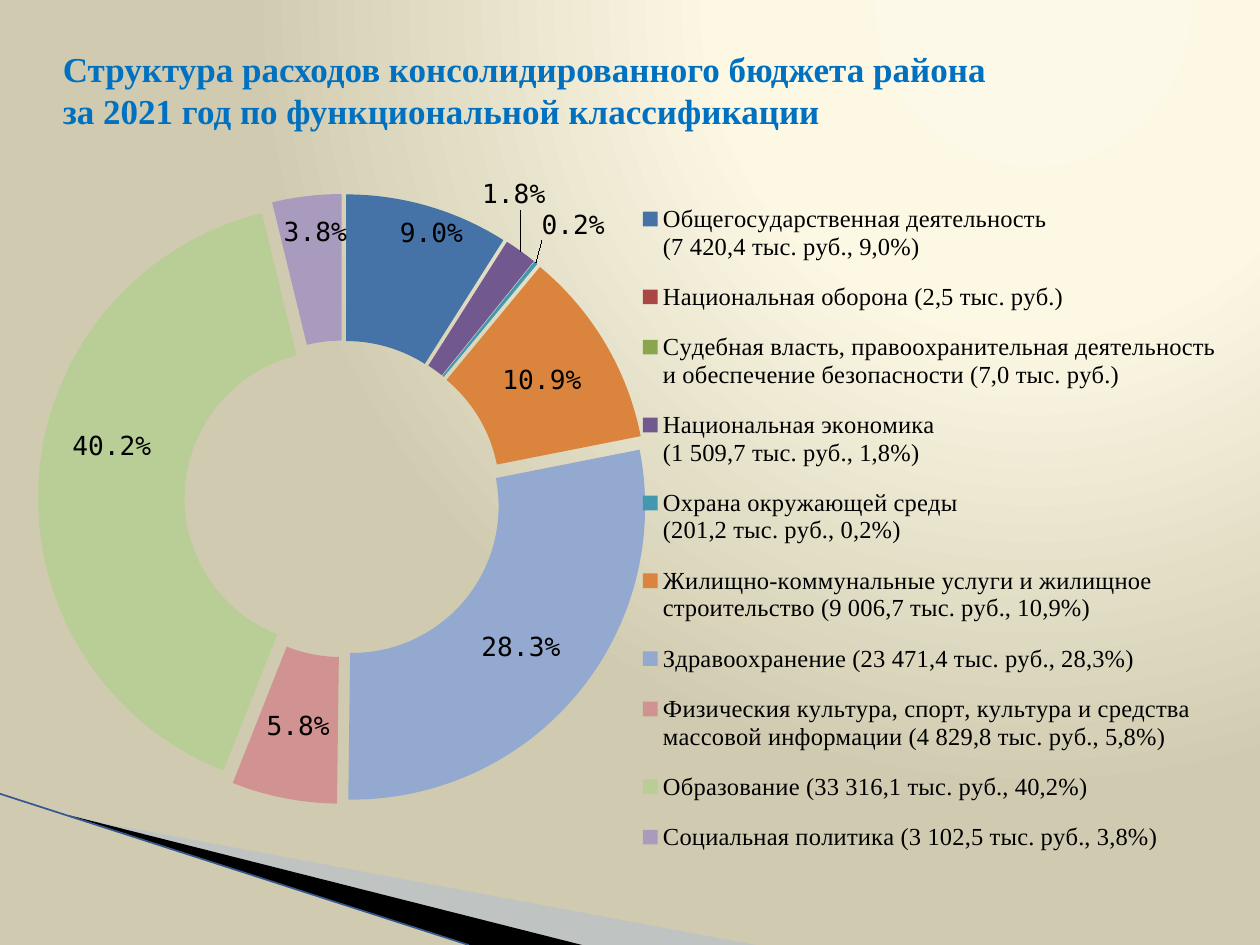
from dataclasses import dataclass

from lxml import etree
from pptx import Presentation, util as u
from pptx.chart import data
from pptx.dml import color
from pptx.enum import chart as charts, shapes, text
from pptx.oxml import ns, parse_xml


@dataclass(frozen=True)
class Theme:
    """Colours, fonts and type sizes."""
    title: str = "0070C0"
    ink: str = "000000"
    wedge: str = "A7B9DB"
    edge: str = "34588F"
    glow: tuple = ((0, "FDF9E8"), (40, "FCF8E4"), (100, "D0CBB0"))
    serif: str = "Times New Roman"
    mono: str = "DejaVu Sans Mono"
    title_size: int = 20
    legend_size: int = 14
    label_size: int = 15


@dataclass(frozen=True)
class Box:
    """A rectangle in EMU that can be cut by shares of its size."""
    left: int
    top: int
    width: int
    height: int

    def point(self, x, y):
        """Return the point at the given shares."""
        return round(self.left + x * self.width), round(self.top + y * self.height)

    def region(self, x, y, width, height):
        """Return the box at the given shares."""
        return Box(*self.point(x, y), round(width * self.width), round(height * self.height))

    def bounds(self):
        """Return left, top, width and height."""
        return self.left, self.top, self.width, self.height


THEME = Theme()
TITLE = ("Структура расходов консолидированного бюджета района\v"
         "за 2021 год по функциональной классификации")
EXPENSES = (
    ("Общегосударственная деятельность\n(7 420,4 тыс. руб., 9,0%)", 0.09, "4572A7"),
    ("Национальная оборона (2,5 тыс. руб.)", None, "AA4643"),
    ("Судебная власть, правоохранительная деятельность и обеспечение безопасности "
     "(7,0 тыс. руб.)", None, "89A54E"),
    ("Национальная экономика\n(1 509,7 тыс. руб., 1,8%)", 0.018, "71588F"),
    ("Охрана окружающей среды\n(201,2 тыс. руб., 0,2%)", 0.002, "4198AF"),
    ("Жилищно-коммунальные услуги и жилищное строительство "
     "(9 006,7 тыс. руб., 10,9%)", 0.109, "DB843D"),
    ("Здравоохранение (23 471,4 тыс. руб., 28,3%)", 0.283, "93A9CF"),
    ("Физическия культура, спорт, культура и средства массовой информации "
     "(4 829,8 тыс. руб., 5,8%)", 0.058, "D19392"),
    ("Образование (33 316,1 тыс. руб., 40,2%)", 0.402, "B9CD96"),
    ("Социальная политика (3 102,5 тыс. руб., 3,8%)", 0.038, "A99BBD"),
)
LABEL_SHIFTS = {0: (0.02, -0.06), 3: (0.03, -0.16), 4: (0.07, -0.13),
                8: (0, -0.05), 9: (0, -0.05)}


def rgb(value):
    """Return a colour from its hex value."""
    return color.RGBColor.from_string(value)


def set_font(font, name, size, ink):
    """Apply face, size and colour to a font."""
    font.name, font.size = name, u.Pt(size)
    font.color.rgb = rgb(ink)


def layout(x, y, width=None, height=None, inner=False):
    """Return a manual chart layout element."""
    values = {"layoutTarget": "inner" if inner else None}
    if width:
        values.update(xMode="edge", yMode="edge")
    values.update(x=x, y=y, w=width, h=height)
    element = etree.Element(ns.qn("c:layout"))
    manual = etree.SubElement(element, ns.qn("c:manualLayout"))
    for name, value in values.items():
        if value is not None:
            etree.SubElement(manual, ns.qn(f"c:{name}")).set("val", str(value))
    return element


def replace_layout(parent, element, index):
    """Put a layout into a chart element at the given index."""
    for old in parent.findall(ns.qn("c:layout")):
        parent.remove(old)
    parent.insert(index, element)


def paint_background(slide):
    """Fill the slide with a circular glow from the upper right."""
    stops = "".join(f'<a:gs pos="{share * 1000}"><a:srgbClr val="{value}"/></a:gs>'
                    for share, value in THEME.glow)
    gradient = parse_xml(
        f'<a:gradFill {ns.nsdecls("a")} rotWithShape="1"><a:gsLst>{stops}</a:gsLst>'
        '<a:path path="circle"><a:fillToRect l="65000" t="0" r="0" b="98000"/></a:path>'
        '</a:gradFill>')
    fill = slide.background.fill
    fill.solid()
    solid = slide.element.find(".//" + ns.qn("p:bgPr") + "/" + ns.qn("a:solidFill"))
    solid.getparent().replace(solid, gradient)


def add_wedge(slide, box, corners, value, opacity=100):
    """Draw one filled wedge inside the box."""
    start, *rest = [box.point(*corner) for corner in corners]
    builder = slide.shapes.build_freeform(*start, scale=1.0)
    builder.add_line_segments(rest, close=True)
    shape = builder.convert_to_shape()
    shape.shadow.inherit = False
    shape.fill.solid()
    shape.fill.fore_color.rgb = rgb(value)
    shape.line.fill.background()
    if opacity < 100:
        paint = shape.element.spPr.find(".//" + ns.qn("a:srgbClr"))
        etree.SubElement(paint, ns.qn("a:alpha")).set("val", str(opacity * 1000))


def add_corner(slide, box):
    """Draw the wedges and the edge line in the lower corner."""
    add_wedge(slide, box, ((0.09, 0.15), (1, 1), (0.77, 1)), THEME.wedge, 40)
    add_wedge(slide, box, ((0.09, 0.14), (0.77, 1), (0.62, 1)), THEME.ink)
    edge = slide.shapes.add_connector(
        shapes.MSO_CONNECTOR.STRAIGHT, *box.point(0, 0), *box.point(0.62, 1))
    edge.line.color.rgb = rgb(THEME.edge)
    edge.line.width = u.Pt(0.95)
    etree.SubElement(edge.element.spPr, ns.qn("a:effectLst"))


def add_title(slide, box):
    """Write the slide title."""
    frame = slide.shapes.add_textbox(*box.bounds()).text_frame
    frame.word_wrap = True
    frame.vertical_anchor = text.MSO_ANCHOR.MIDDLE
    paragraph = frame.paragraphs[0]
    paragraph.text = TITLE
    set_font(paragraph.font, THEME.serif, THEME.title_size, THEME.title)
    paragraph.font.bold = True


def style_series(series):
    """Colour the slices, pull them apart and shift the labels."""
    for index, (_, value, tint) in enumerate(EXPENSES):
        point = series.points[index]
        point.format.fill.solid()
        point.format.fill.fore_color.rgb = rgb(tint)
        point.format.line.fill.background()
        explosion = etree.Element(ns.qn("c:explosion"))
        explosion.set("val", "8")
        point_xml = series._element.findall(ns.qn("c:dPt"))[index]
        point_xml.find(ns.qn("c:spPr")).addprevious(explosion)
        if index in LABEL_SHIFTS:
            set_font(point.data_label.font, THEME.mono, THEME.label_size, THEME.ink)
            label = series._element.findall(".//" + ns.qn("c:dLbl"))[-1]
            replace_layout(label, layout(*LABEL_SHIFTS[index]), 1)
    labels = series.data_labels
    labels.show_value = True
    labels.number_format, labels.number_format_is_linked = "0.0%", False
    set_font(labels.font, THEME.mono, THEME.label_size, THEME.ink)


def add_expenses(slide, box):
    """Draw the doughnut of expenses with its legend."""
    names, values, _ = zip(*EXPENSES)
    chart_data = data.CategoryChartData(number_format="0.0%")
    chart_data.categories = names
    chart_data.add_series("Расходы", values)
    chart = slide.shapes.add_chart(
        charts.XL_CHART_TYPE.DOUGHNUT, *box.bounds(), chart_data).chart
    chart.has_title = False
    set_font(chart.font, THEME.mono, THEME.label_size, THEME.ink)
    chart.plots[0].vary_by_categories = True
    style_series(chart.plots[0].series[0])
    chart.has_legend = True
    legend = chart.legend
    legend.position = charts.XL_LEGEND_POSITION.RIGHT
    legend.include_in_layout = False
    set_font(legend.font, THEME.serif, THEME.legend_size, THEME.ink)
    replace_layout(legend._element, layout(0.5, 0.03, 0.49, 0.95), 1)
    plot_area = chart._chartSpace.find(".//" + ns.qn("c:plotArea"))
    replace_layout(plot_area, layout(0.01, 0.06, 0.49, 0.81, inner=True), 0)


def main():
    """Build and save the presentation."""
    presentation = Presentation()
    presentation.slide_width, presentation.slide_height = u.Inches(10), u.Inches(7.5)
    slide = presentation.slides.add_slide(presentation.slide_layouts[6])
    page = Box(0, 0, presentation.slide_width, presentation.slide_height)
    paint_background(slide)
    add_corner(slide, page.region(0, 0.84, 0.6, 0.16))
    add_expenses(slide, page.region(0.03, 0.17, 0.95, 0.77))
    add_title(slide, page.region(0.04, 0.04, 0.93, 0.11))
    presentation.save("out.pptx")


if __name__ == "__main__":
    main()
